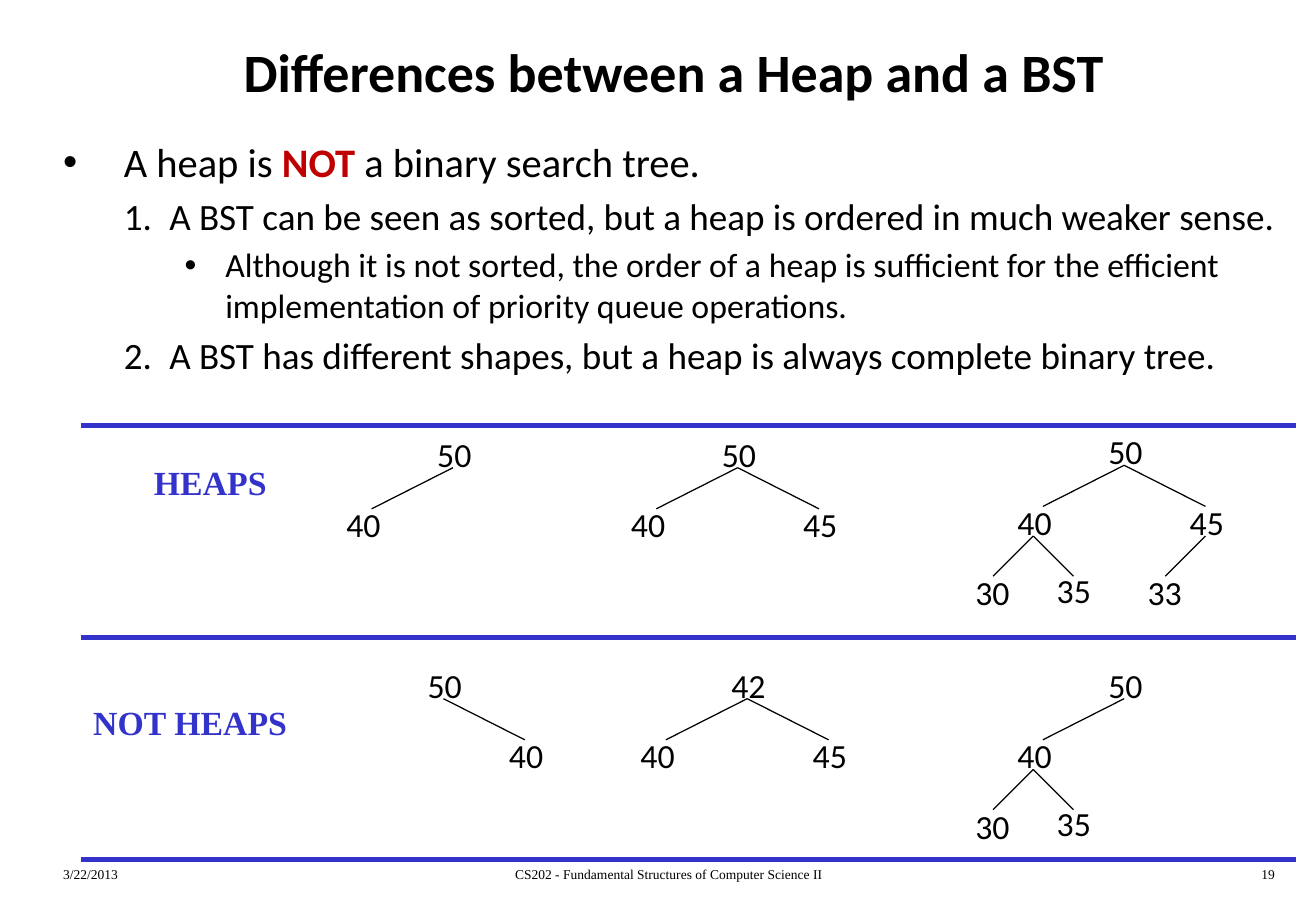
from lxml.etree import SubElement
from pptx import Presentation
from pptx.dml.color import RGBColor
from pptx.enum.shapes import MSO_CONNECTOR
from pptx.enum.text import MSO_ANCHOR, PP_ALIGN
from pptx.oxml.ns import qn
from pptx.util import Cm, Pt

BLACK, RED, BLUE = "000000", "C00000", "3333CC"
SANS, SERIF = "Calibri", "Times New Roman"

# Child offsets by tree depth: node position (dx, dy) and edge end (dx, dy), in cm
LEFT_CHILD = [(-1.9, 1.48, -1.7, 0.86), (-0.88, 1.47, -0.84, 0.84)]
RIGHT_CHILD = [(1.7, 1.48, 1.7, 0.86), (0.82, 1.42, 0.84, 0.84)]

# Trees are (value, left subtree, right subtree), each with its root (x, y) in the band
HEAPS = [
    (7.77, 0.89, ("50", ("40",), None)),
    (13.72, 0.89, ("50", ("40",), ("45",))),
    (21.8, 0.84, ("50", ("40", ("30",), ("35",)), ("45", ("33",), None))),
]
NOT_HEAPS = [
    (7.57, 1.27, ("50", None, ("40",))),
    (13.92, 1.27, ("42", ("40",), ("45",))),
    (21.8, 1.27, ("50", ("40", ("30",), ("35",)), None)),
]

# Points are (level, left margin, hanging indent, size, bullet, runs)
POINTS = [
    (0, 1.27, 1.27, 24, "•", [("A heap is ", BLACK, False), ("NOT", RED, True),
                              (" a binary search tree.", BLACK, False)]),
    (1, 2.22, 0.95, 22, "1.", [("A BST can be seen as sorted, but a heap is ordered "
                                "in much weaker sense.", BLACK, False)]),
    (2, 3.39, 0.85, 20, "•", [("Although it is not sorted, the order of a heap is sufficient for "
                               "the efficient implementation of priority queue operations.",
                               BLACK, False)]),
    (1, 2.22, 0.95, 22, "1.", [("A BST has different shapes, but a heap is always "
                                "complete binary tree.", BLACK, False)]),
]


def color(value):
    return RGBColor.from_string(value)


def add_run(paragraph, text, size, font=SANS, fill=BLACK, bold=False):
    run = paragraph.add_run()
    run.text = text
    run.font.size = Pt(size)
    run.font.name = font
    run.font.bold = bold
    run.font.color.rgb = color(fill)


def add_box(shapes, left, top, width, height, wrap=True):
    frame = shapes.add_textbox(Cm(left), Cm(top), Cm(width), Cm(height)).text_frame
    frame.word_wrap = wrap
    return frame


def add_line(shapes, x1, y1, x2, y2, fill, width):
    line = shapes.add_connector(MSO_CONNECTOR.STRAIGHT, Cm(x1), Cm(y1), Cm(x2), Cm(y2))
    line.line.color.rgb = color(fill)
    line.line.width = Pt(width)
    SubElement(line._element.spPr, qn("a:effectLst"))


def add_title(slide, left, top, width, height):
    frame = add_box(slide.shapes, left, top, width, height)
    frame.vertical_anchor = MSO_ANCHOR.MIDDLE
    frame.paragraphs[0].alignment = PP_ALIGN.CENTER
    add_run(frame.paragraphs[0], "Differences between a Heap and a BST", 32, bold=True)


def format_bullet(paragraph, margin, hanging, bullet):
    properties = paragraph._p.get_or_add_pPr()
    properties.set("marL", str(Cm(margin)))
    properties.set("indent", str(-Cm(hanging)))
    spacing = SubElement(properties, qn("a:spcBef"))
    SubElement(spacing, qn("a:spcPct"), val="20000")
    if bullet == "1.":
        SubElement(properties, qn("a:buAutoNum"), type="arabicPeriod")
    else:
        SubElement(properties, qn("a:buFont"), typeface="Arial")
        SubElement(properties, qn("a:buChar"), char=bullet)


def add_points(slide, left, top, width, height):
    frame = add_box(slide.shapes, left, top, width, height)
    for index, (level, margin, hanging, size, bullet, runs) in enumerate(POINTS):
        paragraph = frame.add_paragraph() if index else frame.paragraphs[0]
        paragraph.level = level
        format_bullet(paragraph, margin, hanging, bullet)
        for text, fill, bold in runs:
            add_run(paragraph, text, size, fill=fill, bold=bold)


def add_tree(shapes, x, y, tree, depth=0):
    """Draw a tree whose edges leave the root at (x, y)."""
    value, *children = tree
    frame = add_box(shapes, x - 0.58, y - 0.84, 1.22, 1.12, wrap=False)
    add_run(frame.paragraphs[0], value, 20)
    for child, offsets in zip(children, (LEFT_CHILD, RIGHT_CHILD)):
        if child:
            node_x, node_y, edge_x, edge_y = offsets[depth]
            add_line(shapes, x, y, x + edge_x, y + edge_y, BLACK, 0.75)
            add_tree(shapes, x + node_x, y + node_y, child, depth + 1)


def add_band(slide, left, top, label, label_x, label_y, label_width, trees):
    shapes = slide.shapes.add_group_shape().shapes
    frame = add_box(shapes, left + label_x, top + label_y, label_width, 1.12, wrap=False)
    add_run(frame.paragraphs[0], label, 20, SERIF, BLUE, True)
    for x, y, tree in trees:
        add_tree(shapes, left + x, top + y, tree)


def add_footer(slide, left, top, width, height):
    side, middle = 5.74, 10.31
    parts = [
        ("3/22/2013", left, side, PP_ALIGN.LEFT),
        ("CS202 - Fundamental Structures of Computer Science II",
         left + (width - middle) / 2, middle, PP_ALIGN.CENTER),
        ("19", left + width - side, side, PP_ALIGN.RIGHT),
    ]
    for text, part_left, part_width, alignment in parts:
        frame = add_box(slide.shapes, part_left, top, part_width, height)
        frame.paragraphs[0].alignment = alignment
        add_run(frame.paragraphs[0], text, 8, SERIF)


def main():
    presentation = Presentation()
    presentation.slide_width, presentation.slide_height = Cm(27.51), Cm(19.05)
    slide = presentation.slides.add_slide(presentation.slide_layouts[6])

    add_footer(slide, 1.07, 17.98, 25.83, 0.64)
    add_title(slide, 1.07, 0.43, 26.04, 2.11)
    add_points(slide, 1.07, 2.74, 26.47, 14.81)

    # Bands of example trees and the rules between them
    left, width = 1.7, 25.4
    heaps_top, not_heaps_top, bottom = 8.89, 13.34, 17.98
    add_band(slide, left, heaps_top, "HEAPS", 1.27, 0.64, 2.9, HEAPS)
    add_band(slide, left, not_heaps_top, "NOT HEAPS", 0, 1.22, 4.6, NOT_HEAPS)
    for y in (heaps_top, not_heaps_top, bottom):
        add_line(slide.shapes, left, y, left + width, y, BLUE, 3)

    presentation.save("out.pptx")


if __name__ == "__main__":
    main()
